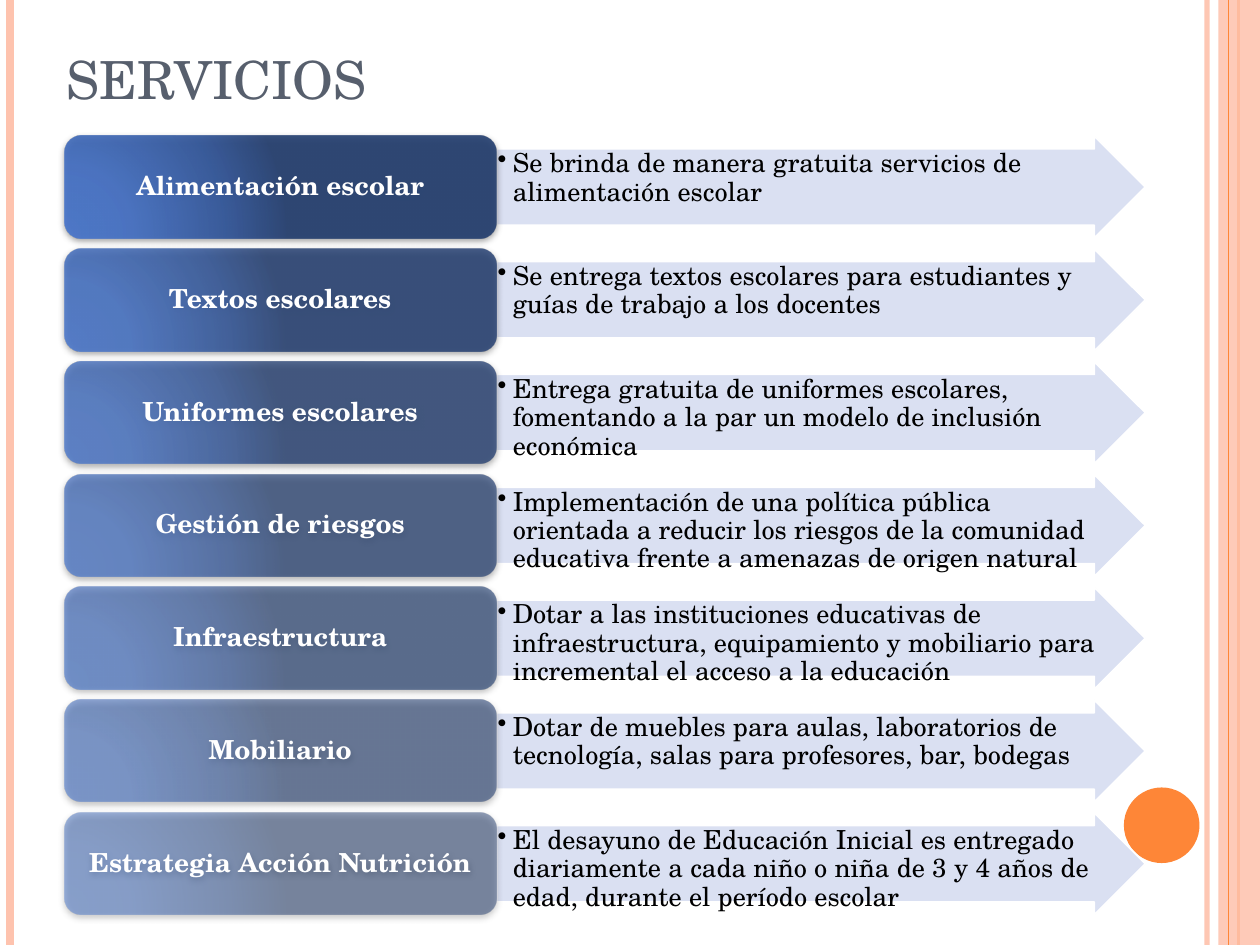
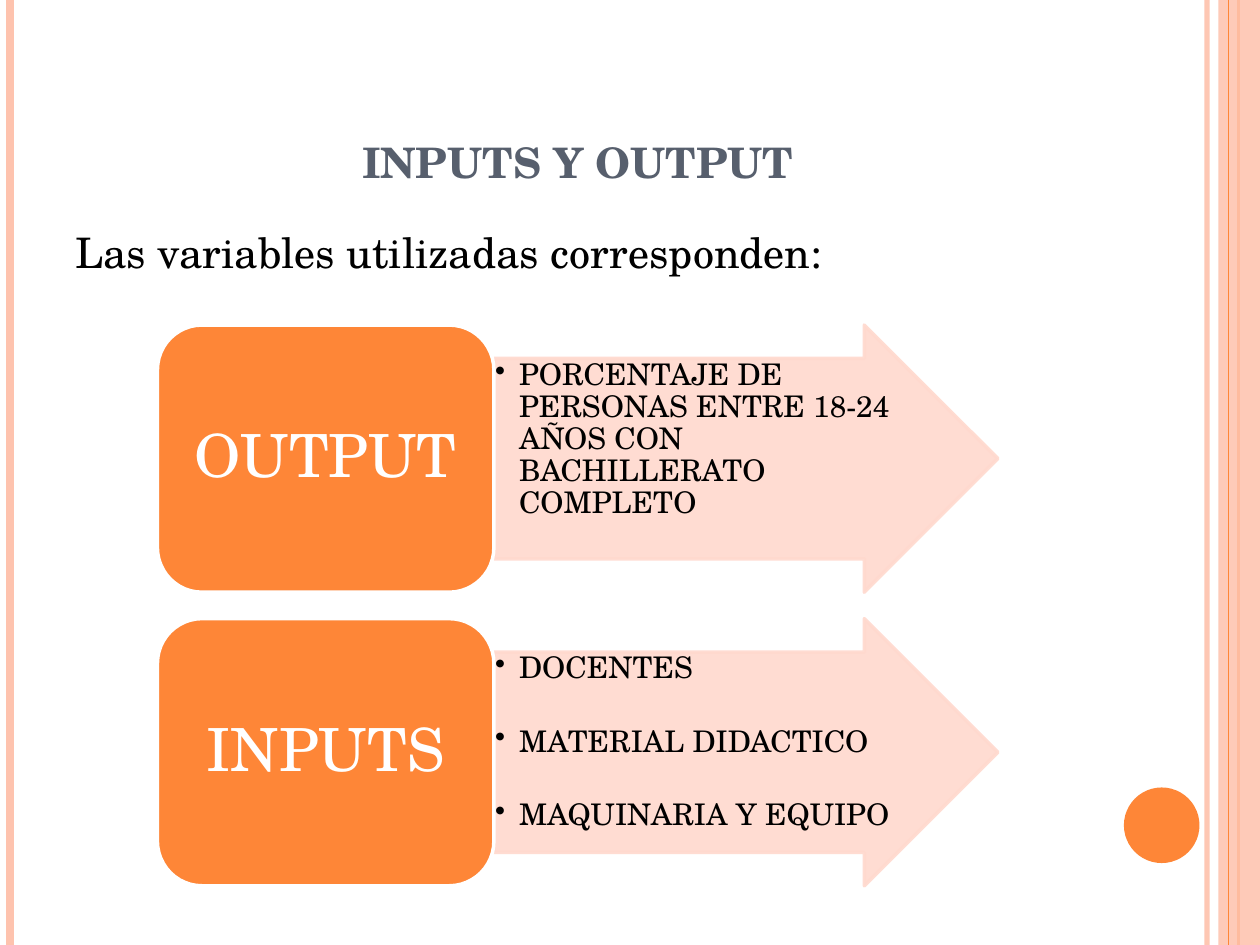
"""Build two slides on school services and on inputs and output."""
from lxml.etree import SubElement as Sub
from pptx import Presentation
from pptx.dml.color import RGBColor as Rgb
from pptx.enum.shapes import MSO_CONNECTOR as Conn, MSO_SHAPE as Form
from pptx.enum.text import MSO_ANCHOR as Anchor, PP_ALIGN as Align
from pptx.oxml.ns import qn
from pptx.util import Inches, Pt

FONT = "TeX Gyre Schola"
HUES = {
    "ink": "000000", "white": "FFFFFF", "title": "575F6D",
    "peach": "FEC3AE", "orange": "FE8637", "pale": "FFD9CE", "sky": "D6DDF1",
}
BLUES = {0: "4574CC", 30: "4370C5", 75: "2F5397", 100: "233E70"}
RAILS = [(9.58, "peach", 3, 93), (0.08, "peach", 4.5, 100), (9.83, "orange", 1.5, 100)]
EDGE = (9.75, "orange", 0.75, 100)
TASKS = [
    ("Alimentación escolar",
     "Se brinda de manera gratuita servicios de alimentación escolar"),
    ("Textos escolares",
     "Se entrega textos escolares para estudiantes y guías de trabajo a los docentes"),
    ("Uniformes escolares",
     "Entrega gratuita de uniformes escolares, fomentando a la par un modelo de "
     "inclusión económica"),
    ("Gestión de riesgos",
     "Implementación de una política pública orientada a reducir los riesgos de la "
     "comunidad educativa frente a amenazas de origen natural"),
    ("Infraestructura",
     "Dotar a las instituciones educativas de infraestructura, equipamiento y "
     "mobiliario para incremental el acceso a la educación"),
    ("Mobiliario",
     "Dotar de muebles para aulas, laboratorios de tecnología, salas para profesores, "
     "bar, bodegas"),
    ("Estrategia Acción Nutrición",
     "El desayuno de Educación Inicial es entregado diariamente a cada niño o niña "
     "de 3 y 4 años de edad, durante el período escolar"),
]
FLOWS = [
    ("OUTPUT", ["PORCENTAJE DE PERSONAS ENTRE 18-24 AÑOS CON BACHILLERATO COMPLETO"]),
    ("INPUTS", ["DOCENTES", "MATERIAL DIDACTICO", "MAQUINARIA Y EQUIPO"]),
]


def tint(name):
    """Return the named colour."""
    return Rgb.from_string(HUES[name])


def fade(shape, tag, alpha):
    """Set the opacity of a shape's fill or line in percent."""
    if alpha < 100:
        for hue in shape.element.spPr.find(qn(tag)).iter(qn("a:srgbClr")):
            Sub(hue, qn("a:alpha"), val=str(alpha * 1000))


def write(shape, *lines, size=15, hue="ink", bold=False, small=False, align=Align.LEFT,
          anchor=Anchor.TOP, pad=(0.1, 0.05), hang=0, dot=False, lead=1, before=0, after=0):
    """Fill a shape with paragraphs in one format."""
    frame = shape.text_frame
    frame.word_wrap = True
    frame.vertical_anchor = anchor
    frame.margin_left = frame.margin_right = Inches(pad[0])
    frame.margin_top = frame.margin_bottom = Inches(pad[1])
    for i, line in enumerate(lines):
        para = frame.add_paragraph() if i else frame.paragraphs[0]
        para.alignment, para.line_spacing = align, lead
        para.space_before, para.space_after = Pt(before), Pt(after)
        run = para.add_run()
        run.text = line
        font = run.font
        font.name, font.size, font.bold = FONT, Pt(size), bold
        font.color.rgb = tint(hue)
        if small:
            run._r.get_or_add_rPr().set("cap", "small")
        props = para._p.get_or_add_pPr()
        if hang:
            props.set("marL", str(Inches(hang)))
            props.set("indent", str(-Inches(hang)))
        if dot:
            Sub(props, qn("a:buChar"), char="•")


def label(slide, spot, text, **form):
    """Add a text box."""
    write(slide.shapes.add_textbox(*map(Inches, spot)), text, **form)


def title(slide, spot, text, **form):
    """Add a slide title."""
    label(slide, spot, text, size=30, hue="title", small=True, anchor=Anchor.BOTTOM, **form)


def block(slide, kind, spot, fill, alpha=100, line=None, width=1, clear=100):
    """Add a plain preset shape."""
    shape = slide.shapes.add_shape(kind, *map(Inches, spot))
    shape.shadow.inherit = False
    shape.fill.solid()
    shape.fill.fore_color.rgb = tint(fill)
    fade(shape, "a:solidFill", alpha)
    if line:
        shape.line.color.rgb = tint(line)
        shape.line.width = Pt(width)
        fade(shape, "a:ln", clear)
    else:
        shape.line.fill.background()
    return shape


def rail(slide, left, hue, width, alpha):
    """Add a line over the full height."""
    line = slide.shapes.add_connector(Conn.STRAIGHT, Inches(left), 0, Inches(left), Inches(7.5))
    line.line.color.rgb = tint(hue)
    line.line.width = Pt(width)
    fade(line, "a:ln", alpha)
    Sub(line.element.spPr, qn("a:effectLst"))


def glow(shape, alpha):
    """Give a shape the blue radial blend and a soft shadow."""
    props = shape.element.spPr
    old = props.find(qn("a:solidFill"))
    blend = Sub(props, qn("a:gradFill"), rotWithShape="1")
    props.replace(old, blend)
    stops = Sub(blend, qn("a:gsLst"))
    for pos, hue in BLUES.items():
        stop = Sub(stops, qn("a:gs"), pos=str(pos * 1000))
        Sub(stop, qn("a:srgbClr"), val=hue)
    way = Sub(blend, qn("a:path"), path="circle")
    Sub(way, qn("a:fillToRect"), l="5000", t="100000", r="120000", b="10000")
    fade(shape, "a:gradFill", alpha)
    shade = Sub(props.find(qn("a:effectLst")), qn("a:outerShdw"), blurRad=str(Pt(4)),
                dist=str(Pt(1.6)), dir="5400000", rotWithShape="0")
    Sub(Sub(shade, qn("a:srgbClr"), val=HUES["ink"]), qn("a:alpha"), val="42000")


def arrow(slide, spot, lines, fill, line, **form):
    """Add a wide arrow with bullet points."""
    shape = block(slide, Form.RIGHT_ARROW, spot, fill, 90, **line)
    shape.adjustments[0] = 0.75
    write(shape, *lines, pad=(0.01, 0.01), dot=True, lead=0.9, **form)


def card(slide, spot, text, size, pad, bold=False, **look):
    """Add a rounded box with a centred name."""
    shape = block(slide, Form.ROUNDED_RECTANGLE, spot, "orange", **look)
    write(shape, text, size=size, hue="white", bold=bold, align=Align.CENTER,
          anchor=Anchor.MIDDLE, pad=pad, lead=0.9, after=0.35 * size)
    return shape


def base(deck):
    """Add a slide with the side bands and the disc."""
    slide = deck.slides.add_slide(deck.slide_layouts[6])
    for item in RAILS:
        rail(slide, *item)
    block(slide, Form.RECTANGLE, (9.67, 0, 0.33, 7.5), "peach", 87)
    rail(slide, *EDGE)
    block(slide, Form.OVAL, (8.92, 6.25, 0.6, 0.6), "orange")
    return slide


def tasks(deck):
    """Build the slide of services."""
    slide = base(deck)
    first, last, high = 1.08, 6.45, 0.81
    steps = len(TASKS) - 1
    for i, (name, text) in enumerate(TASKS):
        top = first + i * (last - first) / steps
        arrow(slide, (3.94, top, 5.15, high), [text], "sky", {"line": "white"}, hang=0.12)
        shape = card(slide, (0.51, top, 3.43, high), name, 15, (0.06, 0.03), bold=True)
        glow(shape, round(90 - 40 * i / steps))
    title(slide, (0.43, 0.21, 8.17, 0.71), "SERVICIOS")


def flows(deck):
    """Build the slide of inputs and output."""
    slide = base(deck)
    title(slide, (0.5, 0.3, 8.17, 1.25), "inputs y output", bold=True, align=Align.CENTER)
    label(slide, (0.5, 1.75, 8.17, 0.6), "Las variables utilizadas corresponden:",
          size=24, align=Align.JUSTIFY, hang=0.3, before=6)
    rim = {"line": "pale", "width": 2, "clear": 90}
    for i, (name, lines) in enumerate(FLOWS):
        top = 2.58 + 2.33 * i
        arrow(slide, (3.92, top, 4, 2.12), lines, "pale", rim, size=17, hang=0.19, after=23.5)
        card(slide, (1.25, top, 2.67, 2.12), name, 34, (0.14, 0.07), line="white", width=2)


def main():
    """Build and save the deck."""
    deck = Presentation()
    deck.slide_width, deck.slide_height = Inches(10), Inches(7.5)
    tasks(deck)
    flows(deck)
    deck.save("out.pptx")


if __name__ == "__main__":
    main()
